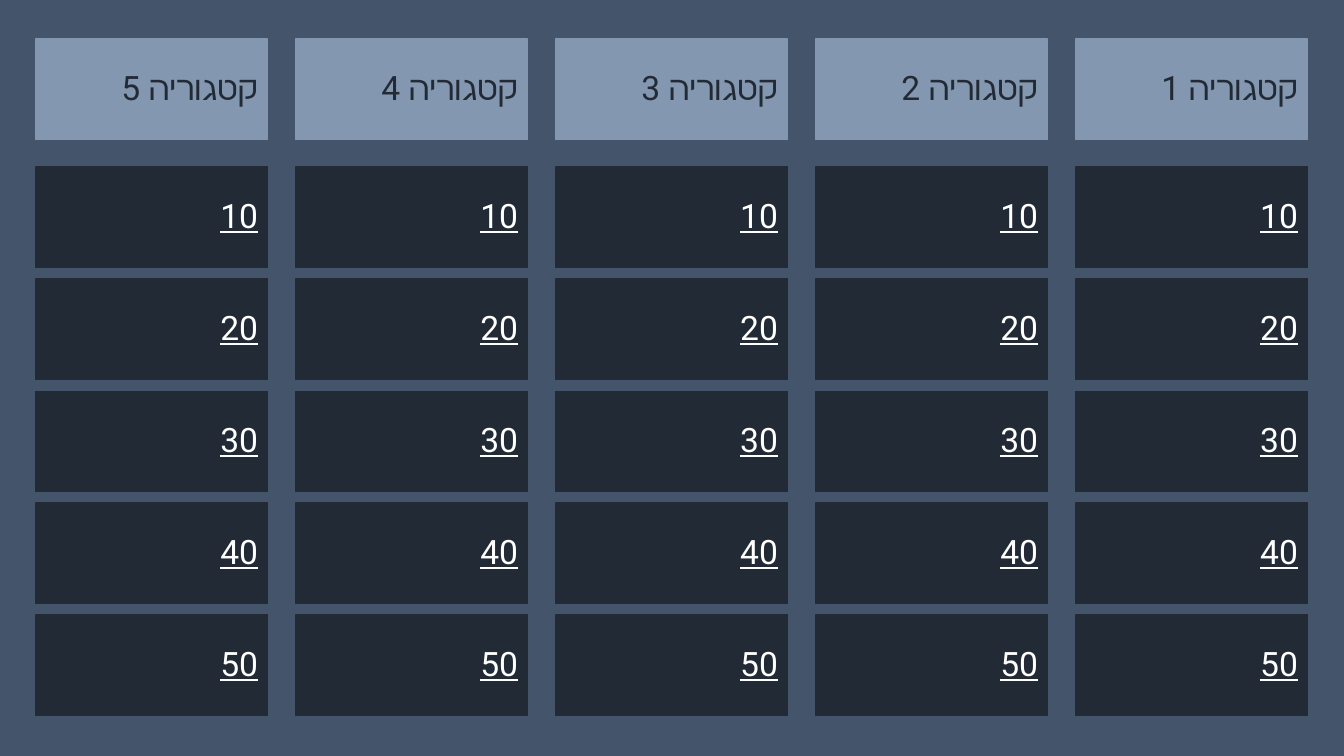
from lxml import etree
from pptx import Presentation
from pptx.dml.color import RGBColor
from pptx.enum.shapes import MSO_SHAPE
from pptx.enum.text import MSO_ANCHOR, PP_ALIGN
from pptx.oxml.ns import qn
from pptx.util import Pt

RECT = MSO_SHAPE.RECTANGLE
MIDDLE = MSO_ANCHOR.MIDDLE
RIGHT = PP_ALIGN.RIGHT
PX = 914400 / 100.8
FONT = "Roboto"
COLORS = {"back": "44546A", "head": "8497B0", "dark": "222A35", "white": "FFFFFF"}


def color(name):
    return RGBColor.from_string(COLORS[name])


def add_tile(slide, left, top, text, fill, ink, under):
    tile = slide.shapes.add_shape(
        RECT, *(round(n * PX) for n in (left, top, 232, 101)))
    tile.shadow.inherit = False
    tile.fill.solid()
    tile.fill.fore_color.rgb = color(fill)
    tile.line.color.rgb = color(fill)
    tile.line.width = Pt(0.75)
    frame = tile.text_frame
    frame.word_wrap = True
    frame.vertical_anchor = MIDDLE
    frame.text = text
    para = frame.paragraphs[0]
    para.alignment = RIGHT
    para.line_spacing = 0.9
    para._p.get_or_add_pPr().set("rtl", "1")
    run = para.runs[0]
    run.font.name = FONT
    run.font.size = Pt(24)
    run.font.color.rgb = color(ink)
    run.font.underline = under
    # Hebrew letters take the complex-script font
    etree.SubElement(run._r.get_or_add_rPr(), qn("a:cs"), typeface=FONT)


deck = Presentation()
deck.slide_width = round(1344 * PX)
deck.slide_height = round(756 * PX)
slide = deck.slides.add_slide(deck.slide_layouts[6])
slide.background.fill.solid()
slide.background.fill.fore_color.rgb = color("back")

# Five columns, numbered from right to left
for col in range(5):
    left = 36 + 260 * col
    add_tile(slide, left, 39, f"קטגוריה {5 - col}", "head", "dark", None)

    # Point tiles under the heading
    for row in range(5):
        add_tile(slide, left, 167 + 112 * row, str(10 * (row + 1)),
                 "dark", "white", True)

deck.save("out.pptx")
